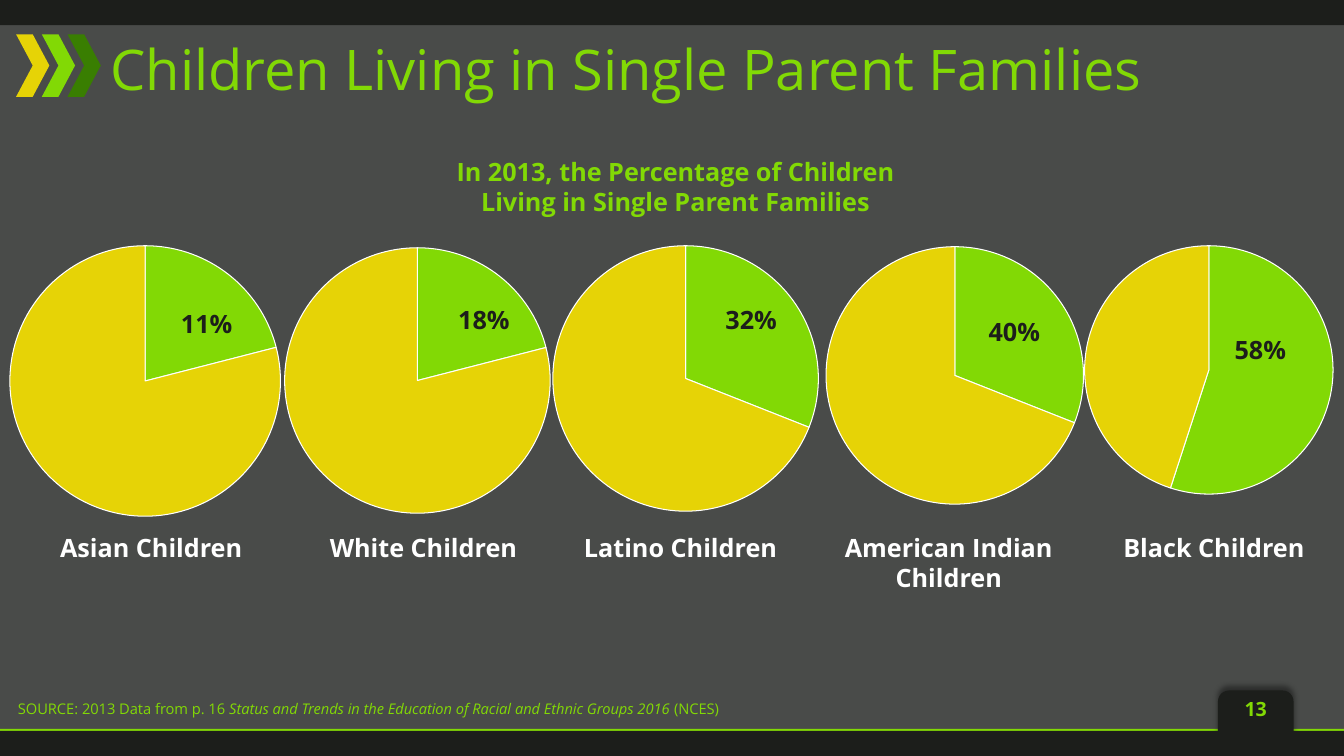
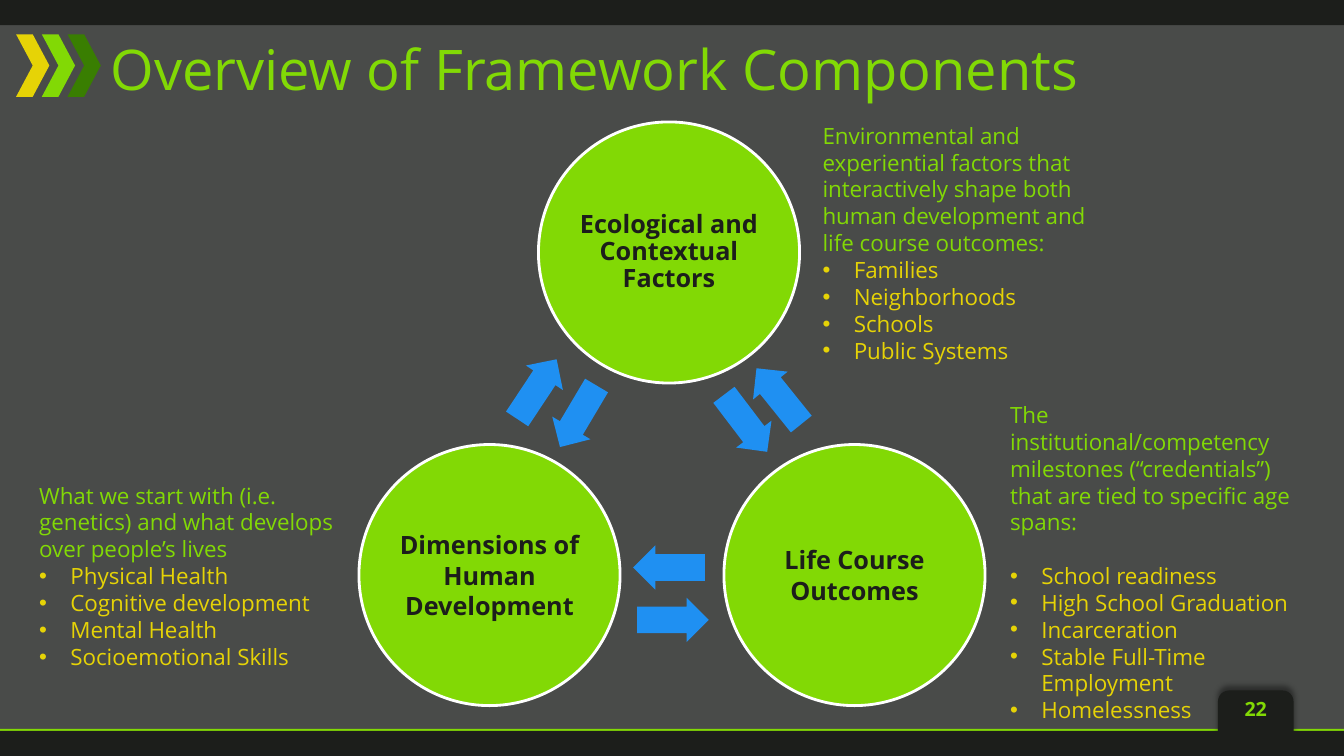
from lxml.etree import SubElement
from pptx import Presentation
from pptx.chart.data import CategoryChartData
from pptx.dml.color import RGBColor
from pptx.enum.chart import XL_CHART_TYPE
from pptx.enum.shapes import MSO_SHAPE
from pptx.enum.text import MSO_ANCHOR, PP_ALIGN
from pptx.oxml import parse_xml
from pptx.oxml.ns import nsdecls, qn
from pptx.util import Inches, Pt


class Theme:
    face = "Open Sans"
    back = RGBColor.from_string("494B49")
    dark = RGBColor.from_string("1C1E1B")
    green = RGBColor.from_string("82D905")
    deep = RGBColor.from_string("397E01")
    gold = RGBColor.from_string("E6D306")
    blue = RGBColor.from_string("1F90F2")
    white = RGBColor.from_string("FFFFFF")
    title, label, note, page, source, chart = 40, 18, 16, 14, 10.5, 10


def form(slide, kind, left, top, width, height, fill):
    """Add a flat preset shape without outline or shadow."""
    shape = slide.shapes.add_shape(
        kind, Inches(left), Inches(top), Inches(width), Inches(height))
    shape.shadow.inherit = False
    shape.fill.solid()
    shape.fill.fore_color.rgb = fill
    shape.line.fill.background()
    return shape


def write(frame, words, size, color, bold=False, align=PP_ALIGN.CENTER):
    """Put words in the first paragraph of a wrapping frame."""
    frame.word_wrap = True
    para = frame.paragraphs[0]
    para.text = words
    para.alignment = align
    font = para.font
    font.name, font.size, font.bold = Theme.face, Pt(size), bold
    font.color.rgb = color
    return para


deck = Presentation()
deck.slide_width, deck.slide_height = Inches(13.33), Inches(7.5)

# Shared frame: bands, chevrons, title, page tab
slides = []
for title, page in [("Children Living in Single Parent Families", "13"),
                    ("Overview of Framework Components", "22")]:
    slide = deck.slides.add_slide(deck.slide_layouts[6])
    slides.append(slide)
    slide.background.fill.solid()
    slide.background.fill.fore_color.rgb = Theme.back
    form(slide, MSO_SHAPE.RECTANGLE, 0, 0, 13.33, 0.25, Theme.dark)
    for i, color in enumerate([Theme.gold, Theme.green, Theme.deep]):
        form(slide, MSO_SHAPE.CHEVRON, 0.16 + 0.255 * i, 0.34, 0.33, 0.62, color)
    form(slide, MSO_SHAPE.RECTANGLE, 0, 7.23, 13.33, 0.02, Theme.green)
    tab = form(slide, MSO_SHAPE.ROUND_2_SAME_RECTANGLE,
               12.08, 6.85, 0.75, 0.65, Theme.dark)
    glow = SubElement(tab.element.spPr.find(qn("a:effectLst")), qn("a:outerShdw"),
                      blurRad=str(Pt(4)), dist=str(Pt(3)), dir="16200000")
    black = SubElement(glow, qn("a:srgbClr"), val="000000")
    SubElement(black, qn("a:alpha"), val="40000")
    form(slide, MSO_SHAPE.RECTANGLE, 0, 7.25, 13.33, 0.25, Theme.dark)

    head = slide.shapes.add_textbox(Inches(1), Inches(0.28), Inches(12.33), Inches(0.8))
    head.text_frame.vertical_anchor = MSO_ANCHOR.MIDDLE
    write(head.text_frame, title, Theme.title, Theme.green, align=PP_ALIGN.LEFT)
    number = slide.shapes.add_textbox(
        Inches(12.08), Inches(6.86), Inches(0.75), Inches(0.48))
    write(number.text_frame, page, Theme.page, Theme.green, True)

# Slide 1: five pies
slide = slides[0]
lead = slide.shapes.add_textbox(Inches(4.41), Inches(1.5), Inches(4.58), Inches(0.71))
write(lead.text_frame,
      "In 2013, the Percentage of Children Living in Single Parent Families",
      Theme.label, Theme.green, True)

# Group, its centre; slice, pie centre, top, height; share, its centre, top
pies = [
    ("Asian Children", 1.5, 21, 1.44, 2.3, 2.96, "11%", 2.05, 3.01),
    ("White Children", 4.2, 21, 4.14, 2.32, 2.91, "18%", 4.8, 2.97),
    ("Latino Children", 6.75, 31, 6.8, 2.3, 2.91, "32%", 7.45, 2.97),
    ("American Indian Children", 9.41, 31, 9.47, 2.31, 2.83, "40%", 10.06, 3.09),
    ("Black Children", 12.04, 55, 11.99, 2.3, 2.74, "58%", 12.5, 3.27),
]
for group, group_x, part, pie_x, pie_y, tall, share, share_x, share_y in pies:
    data = CategoryChartData()
    data.categories = ["1", "2"]
    data.add_series("Series 1", (part, 100 - part))
    wide = 1.43 * tall
    chart = slide.shapes.add_chart(
        XL_CHART_TYPE.PIE, Inches(pie_x - wide / 2), Inches(pie_y),
        Inches(wide), Inches(tall), data).chart
    chart.has_title = chart.has_legend = False
    chart.font.name, chart.font.size = Theme.face, Pt(Theme.chart)
    chart.font.color.rgb = Theme.white
    chart.element.find(qn("c:txPr")).addprevious(parse_xml(
        f"<c:spPr {nsdecls('c', 'a')}><a:noFill/><a:ln><a:noFill/></a:ln></c:spPr>"))
    plot = chart.plots[0]
    plot.vary_by_categories = True
    for i, color in enumerate([Theme.green, Theme.gold]):
        look = plot.series[0].points[i].format
        look.fill.solid()
        look.fill.fore_color.rgb = color
        look.line.color.rgb = Theme.white
        look.line.width = Pt(0.75)

for group, group_x, part, pie_x, pie_y, tall, share, share_x, share_y in pies:
    for words, mid, top, wide, color in [(group, group_x, 5.23, 3.08, Theme.white),
                                         (share, share_x, share_y, 1.07, Theme.dark)]:
        label = slide.shapes.add_textbox(
            Inches(mid - wide / 2), Inches(top), Inches(wide), Inches(0.4))
        write(label.text_frame, words, Theme.label, color, True)

source = slide.shapes.add_textbox(
    Inches(0.08), Inches(6.89), Inches(10.62), Inches(0.28))
para = write(source.text_frame, "SOURCE: 2013 Data from p. 16 ",
             Theme.source, Theme.green, align=PP_ALIGN.LEFT)
work = para.add_run()
work.text = "Status and Trends in the Education of Racial and Ethnic Groups 2016 "
work.font.italic = True
para.add_run().text = "(NCES)"

# Slide 2: three linked circles with notes
slide = slides[1]
for words, left, top, pitch in [
        ("Ecological and Contextual Factors", 5.34, 1.21, 0.9),
        ("Life Course Outcomes", 7.18, 4.41, 1.0),
        ("Dimensions of Human Development", 3.56, 4.41, 1.0)]:
    disc = form(slide, MSO_SHAPE.OVAL, left, top, 2.59, 2.59, Theme.green)
    disc.line.color.rgb = Theme.white
    disc.line.width = Pt(2)
    frame = disc.text_frame
    frame.margin_left = frame.margin_right = frame.margin_top = frame.margin_bottom = 0
    frame.vertical_anchor = MSO_ANCHOR.MIDDLE
    write(frame, words, Theme.label, Theme.dark, True).line_spacing = pitch

for left, top, height, gap, lead, items in [
        (9.92, 3.93, 2.79, 19,
         "The institutional/competency milestones (“credentials”) "
         "that are tied to specific age spans:",
         ["School readiness", "High School Graduation", "Incarceration",
          "Stable Full-Time Employment", "Homelessness"]),
        (0.29, 4.73, 2.52, 0,
         "What we start with (i.e. genetics) and what develops over people’s lives",
         ["Physical Health", "Cognitive development", "Mental Health",
          "Socioemotional Skills"]),
        (8.06, 1.16, 2.52, 0,
         "Environmental and experiential factors that interactively shape both "
         "human development and life course outcomes:",
         ["Families", "Neighborhoods", "Schools", "Public Systems"])]:
    note = slide.shapes.add_textbox(
        Inches(left), Inches(top), Inches(3.17), Inches(height))
    frame = note.text_frame
    write(frame, lead, Theme.note, Theme.green, align=PP_ALIGN.LEFT)
    for i, item in enumerate(items):
        para = frame.add_paragraph()
        para.text = item
        para.space_before = Pt(0 if i else gap)
        props = para._p.get_or_add_pPr()
        props.set("marL", str(Inches(0.31)))
        props.set("indent", str(-Inches(0.31)))
        SubElement(props, qn("a:buFont"), typeface="Arial")
        SubElement(props, qn("a:buChar"), char="•")
        para.font.name, para.font.size = Theme.face, Pt(Theme.note)
        para.font.color.rgb = Theme.gold

for left, top, turn in [(7.37, 3.71, 231.2), (7.04, 3.98, 52.8),
                        (6.28, 5.41, 180), (6.32, 5.93, 0),
                        (4.97, 3.64, 303.5), (5.38, 3.91, 120.7)]:
    arrow = form(slide, MSO_SHAPE.RIGHT_ARROW, left, top, 0.71, 0.44, Theme.blue)
    arrow.adjustments[0], arrow.adjustments[1] = 0.6, 0.5
    arrow.rotation = turn

deck.save("out.pptx")
